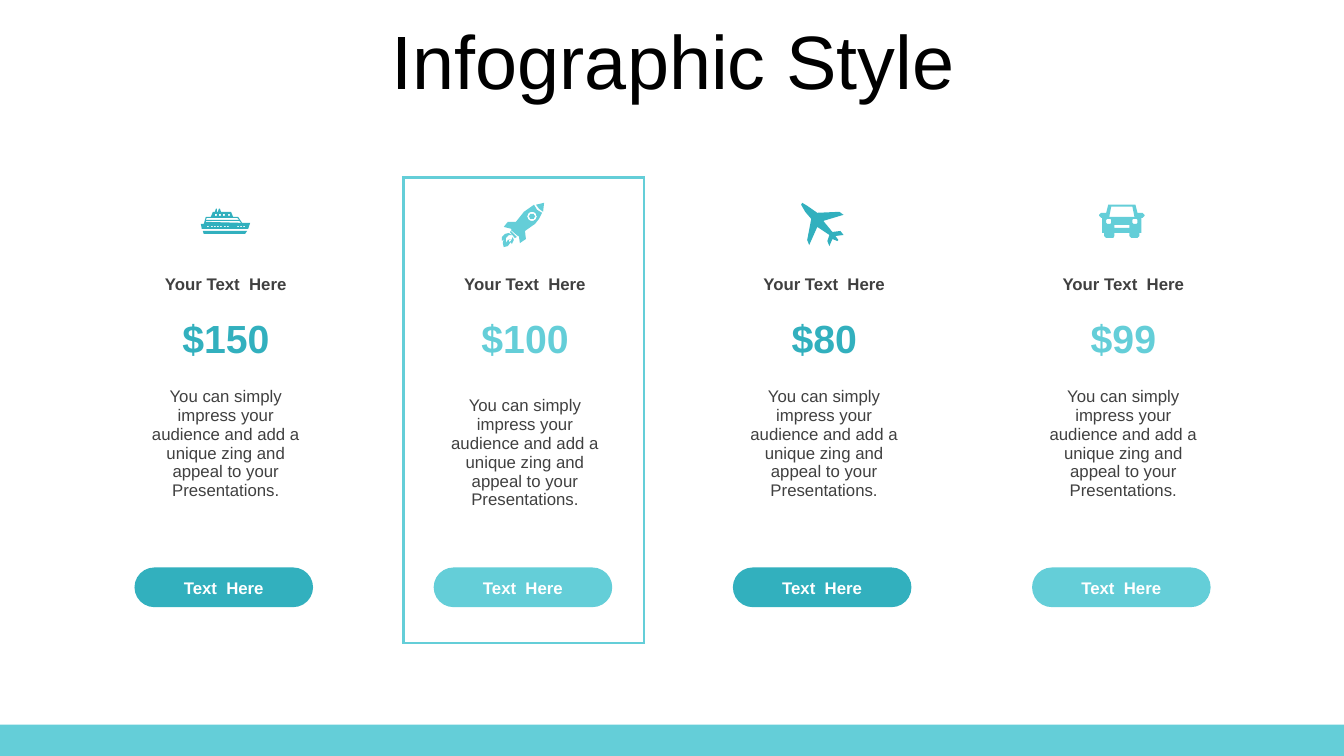
import math

from lxml import etree
from pptx import Presentation
from pptx import util as u
from pptx.dml.color import RGBColor
from pptx.enum import shapes, text
from pptx.oxml import ns

TITLE = "Infographic Style"
HEADING = "Your Text  Here"
BODY = ("You can simply impress your audience and add a unique zing "
        "and appeal to your Presentations.")
BUTTON = "Text  Here"
FONT = "Arial"
TEAL, AQUA, GREY, WHITE, BLACK = "32B0BE", "64CED8", "404040", "FFFFFF", "000000"


def box(x, y, w, h):
    return [(x, y), (x + w, y), (x + w, y + h), (x, y + h)]


def circle(x, y, radius, steps=20):
    angles = [2 * math.pi * i / steps for i in range(steps)]
    return [(x + radius * math.cos(a), y + radius * math.sin(a)) for a in angles]


# Icon outlines, in hundredths of an inch from each icon's top left corner
SHIP = [
    [(18, 0), (19, 0), (20, 3), (30, 3), (32, 8), (37, 8), (41, 14), (49, 14),
     (47, 20), (1, 20), (0, 15), (3, 15), (5, 8), (10, 8), (12, 3), (14, 3),
     (15, 0), (16, 0), (16, 3), (17, 3)],
    [(2, 22), (46, 22), (44, 25), (3, 25)],
    [(5, 12), (5, 13), (40, 14), (38, 12)],
    [(6, 9), (5, 11), (38, 11), (36, 9)],
    *[box(x, 17, 2, 1) for x in (6, 10, 13, 16, 19, 23, 26, 36, 39, 42)],
    *[box(x, 5, 2, 2) for x in (14, 18, 22, 27)],
]
ROCKET = [
    [(33, 2), (36, 7), (41, 10), (38, 16), (34, 21), (24, 28), (25, 36),
     (19, 40), (18, 33), (17, 33), (10, 27), (11, 26), (3, 24), (7, 19),
     (15, 19), (23, 9)],
    circle(31, 13.5, 4.5),
    circle(31, 13.5, 2.8),
    [(43, 0), (42, 9), (38, 6), (35, 2)],
    [(10, 28), (16, 34), (14, 35), (9, 29)],
    [(11, 32), (8, 32), (5, 35), (5, 40), (7, 37), (10, 36), (8, 37), (8, 39),
     (10, 38), (12, 34), (13, 37), (11, 41), (10, 39), (7, 43), (3, 44),
     (2, 40), (3, 36), (1, 38), (1, 34), (4, 31), (8, 30)],
]
PLANE = [
    [(42, 32), (34, 33), (37, 37), (36, 38), (31, 36), (28, 43), (26, 38),
     (28, 32), (16, 24), (8, 42), (6, 37), (10, 16), (4, 9), (0, 2), (1, 0),
     (6, 3), (16, 10), (38, 9), (42, 12), (22, 18), (31, 29), (39, 28)],
]
CAR = [
    [(9, 0), (36, 0), (38, 8), (43, 8), (45, 10), (45, 11), (43, 13), (42, 13),
     (42, 28), (40, 28), (40, 31), (38, 33), (32, 33), (30, 31), (30, 28),
     (15, 28), (15, 31), (14, 33), (7, 33), (5, 31), (5, 28), (3, 28), (3, 13),
     (2, 13), (0, 11), (0, 10), (2, 8), (7, 8)],
    [(12, 2), (10, 12), (35, 12), (33, 2)],
    box(15, 20, 15, 3),
    circle(9.5, 16.5, 2.5),
    circle(35.5, 16.5, 2.5),
]

# price, colour, icon, icon offset in the card (cm), framed
PLANS = [
    ("$150", TEAL, SHIP, (2.44, 0.79), False),
    ("$100", AQUA, ROCKET, (2.46, 0.64), True),
    ("$80", TEAL, PLANE, (2.49, 0.64), False),
    ("$99", AQUA, CAR, (2.46, 0.69), False),
]
CARD_LEFT, CARD_TOP, CARD_STEP = 2.62, 4.47, 7.54
COLUMNS = [0.77, 4.6, 0.7]
ROWS = [2.11, 1.19, 1.6, 4.09, 0.72, 1.19, 0.83]
BUTTON_TOP, BUTTON_WIDTH, BUTTON_HEIGHT = 14.3, 4.5, 1
ICON_UNIT = u.Cm(0.0254)
NO_STYLE = "{2D5ABB26-0587-4C30-8999-92F81FD0307C}"


def rgb(colour):
    return RGBColor.from_string(colour)


def write(frame, words, size, colour, bold=False):
    paragraph = frame.paragraphs[0]
    paragraph.alignment = text.PP_ALIGN.CENTER
    run = paragraph.add_run()
    run.text = words
    run.font.name, run.font.size, run.font.bold = FONT, u.Pt(size), bold
    run.font.color.rgb = rgb(colour)
    return paragraph


def paint(shape, colour):
    shape.shadow.inherit = False
    shape.fill.solid()
    shape.fill.fore_color.rgb = rgb(colour)
    shape.line.fill.background()


def add_border(cell, sides, colour):
    properties = cell._tc.get_or_add_tcPr()
    for side in sides:
        line = etree.SubElement(properties, ns.qn("a:ln" + side), w=str(u.Pt(2.25)))
        fill = etree.SubElement(line, ns.qn("a:solidFill"))
        etree.SubElement(fill, ns.qn("a:srgbClr"), val=colour)


def add_card(slide, left, price, colour, framed):
    table = slide.shapes.add_table(
        len(ROWS), len(COLUMNS), u.Cm(left), u.Cm(CARD_TOP),
        u.Cm(sum(COLUMNS)), u.Cm(sum(ROWS))).table
    table.first_row = table.horz_banding = False
    table._tbl.tblPr.find(ns.qn("a:tableStyleId")).text = NO_STYLE
    for column, width in zip(table.columns, COLUMNS):
        column.width = u.Cm(width)
    wording = {1: (HEADING, 12, GREY, True), 2: (price, 28, colour, True),
               3: (BODY, 12, GREY, False)}
    for r, height in enumerate(ROWS):
        table.rows[r].height = u.Cm(height)
        for c in range(len(COLUMNS)):
            cell = table.cell(r, c)
            if framed:
                edges = {"L": c == 0, "R": c == len(COLUMNS) - 1,
                         "T": r == 0, "B": r == len(ROWS) - 1}
                add_border(cell, [s for s, outer in edges.items() if outer], colour)
            cell.fill.background()
            cell.vertical_anchor = text.MSO_ANCHOR.MIDDLE
            if c == 1 and r in wording:
                write(cell.text_frame, *wording[r])
            else:
                cell.margin_top = cell.margin_bottom = 0
                end = cell.text_frame.paragraphs[0]._p.get_or_add_endParaRPr()
                end.set("sz", "800")
    if not framed:
        table.cell(3, 1).margin_bottom = u.Cm(0.59)


def add_icon(slide, left, top, outlines, colour):
    builder = slide.shapes.build_freeform(*outlines[0][0], scale=ICON_UNIT)
    for outline in outlines:
        builder.move_to(*outline[0])
        builder.add_line_segments(outline[1:], close=True)
    paint(builder.convert_to_shape(u.Cm(left), u.Cm(top)), colour)


def add_button(slide, left, colour):
    button = slide.shapes.add_shape(
        shapes.MSO_SHAPE.ROUNDED_RECTANGLE, u.Cm(left), u.Cm(BUTTON_TOP),
        u.Cm(BUTTON_WIDTH), u.Cm(BUTTON_HEIGHT))
    button.adjustments[0] = 0.5
    paint(button, colour)
    button.text_frame.vertical_anchor = text.MSO_ANCHOR.MIDDLE
    write(button.text_frame, BUTTON, 12, WHITE, True)


def main():
    deck = Presentation()
    deck.slide_width, deck.slide_height = u.Cm(33.87), u.Cm(19.05)
    slide = deck.slides.add_slide(deck.slide_layouts[5])

    footer = slide.shapes.add_shape(
        shapes.MSO_SHAPE.RECTANGLE, 0, u.Cm(18.26), deck.slide_width, u.Cm(0.79))
    paint(footer, AQUA)

    title = slide.shapes.title
    title.left, title.top = u.Cm(0.89), u.Cm(0.64)
    title.width, title.height = u.Cm(32.16), u.Cm(2)
    title.text_frame.auto_size = text.MSO_AUTO_SIZE.NONE
    title.text_frame.vertical_anchor = text.MSO_ANCHOR.MIDDLE
    write(title.text_frame, TITLE, 54, BLACK).line_spacing = 0.9

    for i, (price, colour, icon, (dx, dy), framed) in enumerate(PLANS):
        left = CARD_LEFT + i * CARD_STEP
        add_card(slide, left, price, colour, framed)
        add_button(slide, left + COLUMNS[0], colour)
        add_icon(slide, left + dx, CARD_TOP + dy, icon, colour)

    deck.save("out.pptx")


if __name__ == "__main__":
    main()
